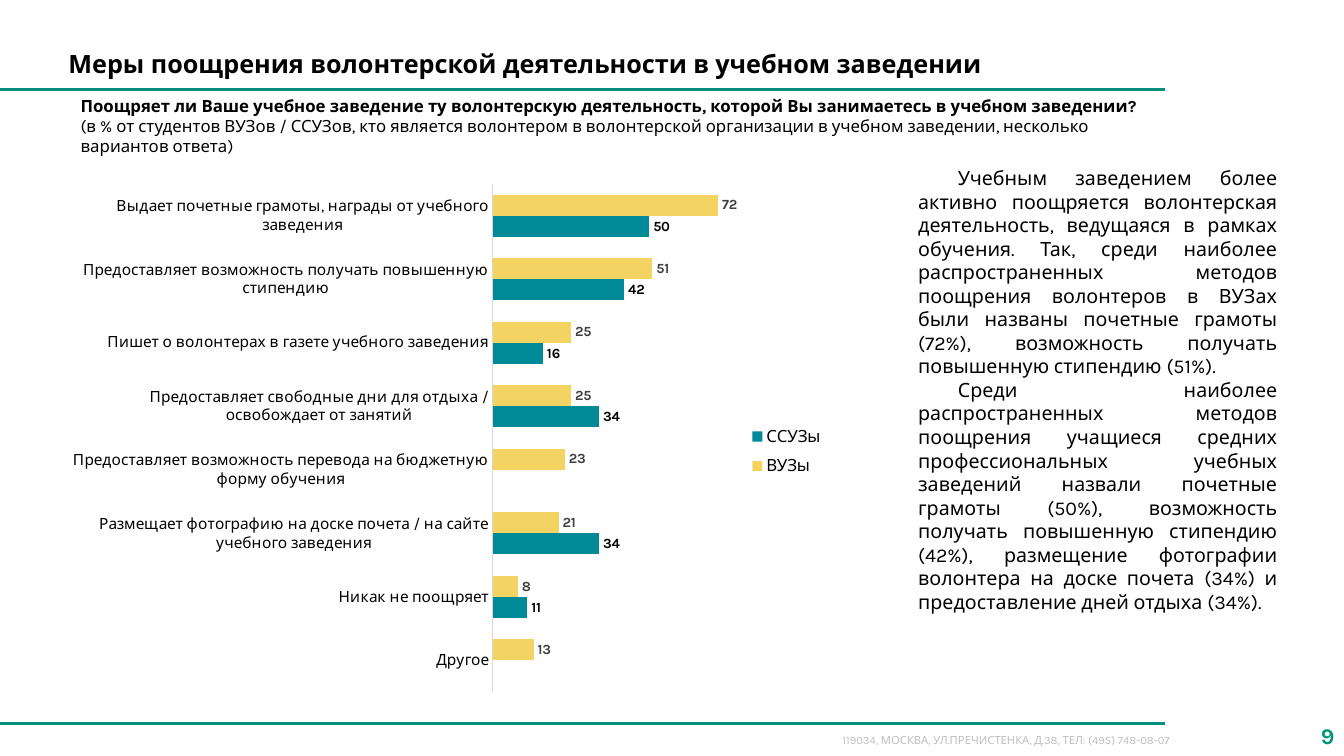
from lxml import etree
from pptx import Presentation
from pptx.chart.data import CategoryChartData
from pptx.dml.color import RGBColor
from pptx.enum import chart as ch, shapes, text as tx
from pptx.oxml import ns
from pptx.util import Cm, Pt

HUES = {
    "rule": "008F7D", "page": "00927B", "pale": "BFBFBF", "black": "000000",
    "grey": "404040", "axis": "D9D9D9", "gold": "F3D463", "teal": "008A98",
}
FACE = "Karla"

TITLE = "Меры поощрения волонтерской деятельности в учебном заведении"
ASK = ("Поощряет ли Ваше учебное заведение ту волонтерскую деятельность, "
       "которой Вы занимаетесь в учебном заведении?")
BASE = ("(в % от студентов ВУЗов / ССУЗов, кто является волонтером в волонтерской "
        "организации в учебном заведении, несколько вариантов ответа)")
NOTES = [
    "Учебным заведением более активно поощряется волонтерская деятельность, "
    "ведущаяся в рамках обучения. Так, среди наиболее распространенных методов "
    "поощрения волонтеров в ВУЗах были названы почетные грамоты (72%), "
    "возможность получать повышенную стипендию (51%).",
    "Среди наиболее распространенных методов поощрения учащиеся средних "
    "профессиональных учебных заведений назвали почетные грамоты (50%), "
    "возможность получать повышенную стипендию (42%), размещение фотографии "
    "волонтера на доске почета (34%) и предоставление дней отдыха (34%).",
]
PERKS = [  # answer, ВУЗы, ССУЗы
    ("Выдает почетные грамоты, награды от учебного заведения", 72, 50),
    ("Предоставляет возможность получать повышенную стипендию", 51, 42),
    ("Пишет о волонтерах в газете учебного заведения", 25, 16),
    ("Предоставляет свободные дни для отдыха / освобождает от занятий", 25, 34),
    ("Предоставляет возможность перевода на бюджетную форму обучения", 23, None),
    ("Размещает фотографию на доске почета / на сайте учебного заведения", 21, 34),
    ("Никак не поощряет", 8, 11),
    ("Другое", 13, None),
]


def hue(name):
    return RGBColor.from_string(HUES[name])


def style(font, size, color="black", bold=False):
    font.name, font.size, font.bold = FACE, Pt(size), bold
    font.color.rgb = hue(color)


def write(frame, line, size=12, color="black", bold=False, align="LEFT", indent=0):
    """Add one formatted paragraph, filling the empty first one if there is one."""
    para = frame.paragraphs[0]
    if para.runs:
        para = frame.add_paragraph()
    para.alignment = getattr(tx.PP_ALIGN, align)
    if indent:
        para._p.get_or_add_pPr().set("indent", str(Cm(indent)))
    run = para.add_run()
    run.text = line
    style(run.font, size, color, bold)


def add_box(slide, left, top, width, height, anchor="TOP"):
    box = slide.shapes.add_textbox(Cm(left), Cm(top), Cm(width), Cm(height))
    frame = box.text_frame
    frame.word_wrap = True
    frame.vertical_anchor = getattr(tx.MSO_ANCHOR, anchor)
    return frame


def add_rule(slide, top):
    rule = slide.shapes.add_connector(
        shapes.MSO_CONNECTOR.STRAIGHT, Cm(0), Cm(top), Cm(29.36), Cm(top))
    rule.line.color.rgb = hue("rule")
    rule.line.width = Pt(2)
    etree.SubElement(rule._element.spPr, ns.qn("a:effectLst"))


def set_title(slide):
    title = slide.shapes.title
    title.left, title.top, title.width, title.height = map(Cm, (1.47, 1.09, 28.83, 1.02))
    frame = title.text_frame
    frame.vertical_anchor = tx.MSO_ANCHOR.MIDDLE
    write(frame, TITLE, size=18, bold=True)


def place(part, **spots):
    """Fix a chart part's layout, given as fractions of the chart."""
    layout = part.find(ns.qn("c:layout"))
    if layout is None:
        layout = etree.Element(ns.qn("c:layout"))
        if part.tag == ns.qn("c:legend"):
            part.find(ns.qn("c:legendPos")).addnext(layout)
        else:
            part.insert(0, layout)
    for old in list(layout):
        layout.remove(old)
    manual = etree.SubElement(layout, ns.qn("c:manualLayout"))
    if part.tag == ns.qn("c:plotArea"):
        etree.SubElement(manual, ns.qn("c:layoutTarget")).set("val", "inner")
    for side in "xy":
        etree.SubElement(manual, ns.qn(f"c:{side}Mode")).set("val", "edge")
    for key, spot in spots.items():
        etree.SubElement(manual, ns.qn(f"c:{key}")).set("val", str(spot))


def add_bars(slide):
    names, *sets = zip(*PERKS)
    data = CategoryChartData(number_format="#,##0")
    data.categories = names
    for name, vals in zip(("ВУЗы", "ССУЗы"), sets):
        data.add_series(name, vals)
    chart = slide.shapes.add_chart(
        ch.XL_CHART_TYPE.BAR_CLUSTERED, Cm(1.78), Cm(4.37), Cm(19.71), Cm(13.34), data).chart
    style(chart.font, 10)
    chart.has_title = False

    plot = chart.plots[0]
    plot.gap_width = 100
    plot.overlap = 0
    plot.vary_by_categories = False
    for bars, fill, ink in zip(plot.series, ("gold", "teal"), ("grey", "black")):
        bars.format.fill.solid()
        bars.format.fill.fore_color.rgb = hue(fill)
        tags = bars.data_labels
        tags.show_value = True
        tags.position = ch.XL_LABEL_POSITION.OUTSIDE_END
        tags.number_format, tags.number_format_is_linked = "#,##0", False
        style(tags.font, 10, ink, bold=True)

    cats, vals = chart.category_axis, chart.value_axis
    cats.reverse_order = True
    cats.major_tick_mark = cats.minor_tick_mark = ch.XL_TICK_MARK.NONE
    style(cats.tick_labels.font, 11)
    cats.format.line.color.rgb = hue("axis")
    cats.format.line.width = Pt(0.75)
    vals.visible = vals.has_major_gridlines = False
    vals.minimum_scale, vals.maximum_scale = 0, 80

    chart.has_legend = True
    chart.legend.position = ch.XL_LEGEND_POSITION.RIGHT
    chart.legend.include_in_layout = False
    style(chart.legend.font, 12)
    place(chart._chartSpace.chart.plotArea, x=0.54, y=0.02, w=0.32, h=0.96)
    place(chart.legend._element, x=0.85, y=0.46, w=0.13, h=0.13)


def main():
    deck = Presentation()
    deck.slide_width, deck.slide_height = Cm(33.87), Cm(19.05)
    slide = deck.slides.add_slide(deck.slide_layouts[5])

    for top in (2.26, 18.24):
        add_rule(slide, top)
    set_title(slide)
    add_bars(slide)

    head = add_box(slide, 1.78, 2.29, 27.76, 1.27)
    write(head, ASK, bold=True)
    write(head, BASE)

    side = add_box(slide, 22.89, 4.06, 9.55, 10.44)
    for note in NOTES:
        write(side, note, size=14, align="JUSTIFY", indent=1)

    foot = add_box(slide, 20.98, 18.36, 9.75, 0.61)
    write(foot, "119034, МОСКВА, УЛ.ПРЕЧИСТЕНКА, Д.38, ТЕЛ: (495) 748-08-07", size=8, color="pale")
    page = add_box(slide, 32.13, 18.03, 1.75, 1.02, anchor="MIDDLE")
    write(page, "9", size=16, color="page", bold=True, align="RIGHT")

    deck.save("out.pptx")


if __name__ == "__main__":
    main()
